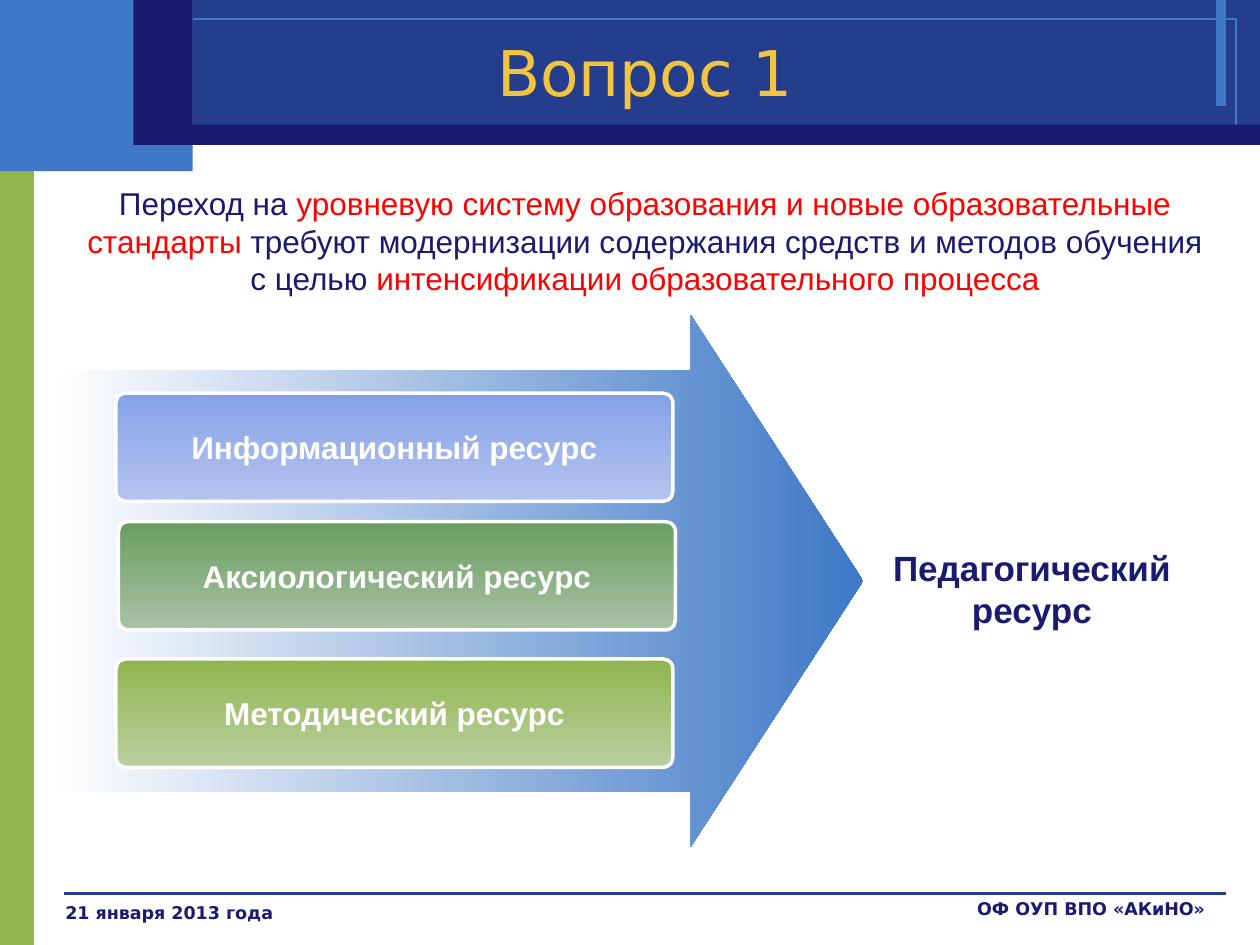
import pptx
import pptx.util
import pptx.dml.color
import pptx.enum.shapes
import pptx.enum.text
import lxml.etree

SHAPE = pptx.enum.shapes.MSO_SHAPE
ALIGN = pptx.enum.text.PP_ALIGN
ANCHOR = pptx.enum.text.MSO_ANCHOR

# The slide is a grid of 100 columns by 75 rows
COLS, ROWS = 100, 75
SLIDE_W, SLIDE_H = pptx.util.Inches(10), pptx.util.Inches(7.5)

COLORS = {
    "navy": "1A1A70", "band": "243D8C", "blue": "3E78C6", "green": "90B54D",
    "gold": "F3C43F", "red": "FF0000", "white": "FFFFFF",
    "sky": "84A1E8", "sky_pale": "B5C4EF",
    "leaf": "699D5F", "leaf_pale": "AAC2A6", "green_pale": "BBCFA1",
}


def rgb(name):
    return pptx.dml.color.RGBColor.from_string(COLORS[name])


def place(box, x, y, w, h):
    """Grid offsets within a box, as lengths on the slide."""
    cw, rh = SLIDE_W / COLS, SLIDE_H / ROWS
    return (round((box[0] + x) * cw), round((box[1] + y) * rh),
            round(w * cw), round(h * rh))


def write(sp, *runs, size=18, font="Arial", color="navy", bold=False,
          align=ALIGN.CENTER, anchor=ANCHOR.TOP, wrap=True):
    """Each run is a text, or a pair of text and colour."""
    tf = sp.text_frame
    tf.word_wrap = wrap
    tf.vertical_anchor = anchor
    p = tf.paragraphs[0]
    p.alignment = align
    for run in runs:
        text, run_color = (run, color) if isinstance(run, str) else run
        r = p.add_run()
        r.text = text
        r.font.size = pptx.util.Pt(size)
        r.font.name = font
        r.font.bold = bold
        r.font.color.rgb = rgb(run_color)


def add_shape(s, kind, at, fill=None, line=None, width=0, angle=0, adj=()):
    """A fill of two colours makes a gradient."""
    sp = s.shapes.add_shape(kind, *at)
    sp.shadow.inherit = False
    if fill is None:
        sp.fill.background()
    elif isinstance(fill, str):
        sp.fill.solid()
        sp.fill.fore_color.rgb = rgb(fill)
    else:
        sp.fill.gradient()
        sp.fill.gradient_angle = angle
        for stop, position, color in zip(sp.fill.gradient_stops, (0, 1), fill):
            stop.position = position
            stop.color.rgb = rgb(color)
    if line:
        sp.line.color.rgb = rgb(line)
        sp.line.width = pptx.util.Pt(width)
    else:
        sp.line.fill.background()
    for i, value in enumerate(adj):
        sp.adjustments[i] = value
    return sp


def header(s, box, title):
    w, h = box[2:]
    side = 15.3  # width of the corner block
    # Corner block, title band and accent
    for part, color in (
        ((0, 0, side, h + 2.1), "blue"),
        ((side, 0, w - side, h), "band"),
        ((96.5, 0, 0.8, 8.4), "blue"),
    ):
        add_shape(s, SHAPE.RECTANGLE, place(box, *part), color)
    # Thin frame, then the dark strips over it
    add_shape(s, SHAPE.RECTANGLE, place(box, 2, 1.5, 96.1, 8.5), line="blue")
    for part in ((13, h - 1.6, w - 13, 1.6), (10.6, 0, 4.7, h)):
        add_shape(s, SHAPE.RECTANGLE, place(box, *part), "navy")
    # Title, in front of the band
    sp = s.shapes.title
    sp.left, sp.top, sp.width, sp.height = place(box, 8.2, 2.6, 86, 6.2)
    write(sp, title, size=36, font="DejaVu Sans", color="gold",
          anchor=ANCHOR.MIDDLE)
    s.shapes.element.append(sp.element)


def resource_arrow(s, box, resources, result):
    # Arrow
    add_shape(s, SHAPE.RIGHT_ARROW, place(box, 0, 0, 64.3, box[3]),
              ("white", "blue"), adj=(0.793, 0.324))
    # Resources on the arrow
    for text, x, y, fill in resources:
        sp = add_shape(s, SHAPE.ROUNDED_RECTANGLE, place(box, x, y, 44.2, 8.6),
                       fill, "white", 2, angle=270, adj=(0.091,))
        write(sp, text, color="white", bold=True, anchor=ANCHOR.MIDDLE,
              wrap=False)
    # Result at the tip
    sp = add_shape(s, SHAPE.ROUNDED_RECTANGLE,
                   place(box, 63, 14.6, 29.4, 14.2), adj=(0.091,))
    write(sp, result, size=20, bold=True, anchor=ANCHOR.MIDDLE)


def intro(s, box, *runs):
    write(s.shapes.add_textbox(*place(box, 0, 0, *box[2:])), *runs)


def footer(s, box, date, owner):
    # Rule
    x, y, w, h = place(box, 0.9, 0, 92.2, 0)
    rule = s.shapes.add_connector(pptx.enum.shapes.MSO_CONNECTOR.STRAIGHT,
                                  x, y, x + w, y)
    rule.line.color.rgb = rgb("band")
    rule.line.width = pptx.util.Pt(0)
    lxml.etree.SubElement(rule.element.spPr, pptx.oxml.ns.qn("a:effectLst"))
    # Date and owner
    for text, part, align in (
        (date, (0, 0.2, 27.5, 2.5), ALIGN.LEFT),
        (owner, (69.2, -0.1, 23.2, 2.6), ALIGN.RIGHT),
    ):
        write(s.shapes.add_textbox(*place(box, *part)), text, size=10,
              font="DejaVu Sans", bold=True, align=align)


def main():
    prs = pptx.Presentation()
    prs.slide_width, prs.slide_height = SLIDE_W, SLIDE_H
    s = prs.slides.add_slide(prs.slide_layouts[5])

    # Green side bar
    add_shape(s, SHAPE.RECTANGLE, place((0, 10.7), 0, 0, 2.7, ROWS - 10.7),
              "green")
    header(s, (0, 0, COLS, 11.5), "Вопрос 1")
    resource_arrow(s, (4.2, 25, 92.4, 42.2), (
        ("Информационный ресурс", 5, 6.2, ("sky", "sky_pale")),
        ("Аксиологический ресурс", 5.2, 16.4, ("leaf", "leaf_pale")),
        ("Методический ресурс", 5, 27.3, ("green", "green_pale")),
    ), "Педагогический ресурс")
    intro(s, (5.5, 14.1, 91.4, 10.1),
          "Переход на ",
          ("уровневую систему образования и новые образовательные стандарты",
           "red"),
          " требуют модернизации содержания средств и методов обучения"
          " с целью ",
          ("интенсификации образовательного процесса", "red"))
    footer(s, (4.2, 70.9, 92.4, 2.7), "21 января 2013 года",
           "ОФ ОУП ВПО «АКиНО»")
    prs.save("out.pptx")


if __name__ == "__main__":
    main()
